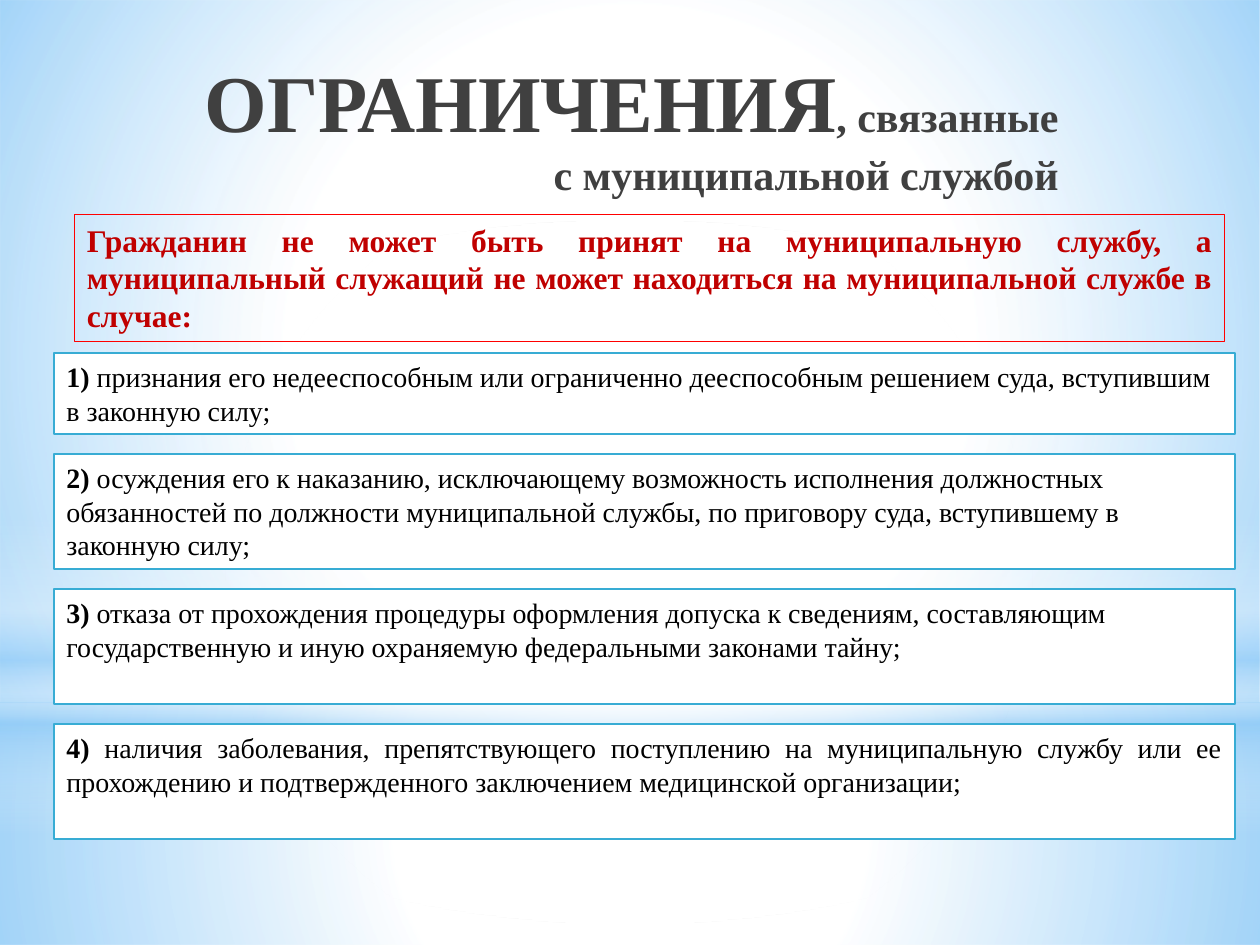
"""Build a slide on the restrictions tied to municipal service."""
from lxml.etree import SubElement
from pptx import Presentation
from pptx.dml.color import RGBColor
from pptx.enum.shapes import MSO_SHAPE as Preset
from pptx.enum.text import MSO_ANCHOR as Anchor, MSO_AUTO_SIZE as AutoSize, PP_ALIGN as Align
from pptx.oxml.ns import qn
from pptx.util import Cm, Pt

WHITE, SKY = "FFFFFF", "8BC9F7"
BACKDROP = [
    (Preset.RECTANGLE, (0, 14.17, 25.4, 4.88), [(0, WHITE, 91), (37, WHITE, 76), (100, SKY, 79)], None),
    (Preset.RECTANGLE, (0, 0, 25.4, 14.17), [(0, WHITE, 89), (48, WHITE, 62), (100, SKY, 79)], None),
    (Preset.RECTANGLE, (0, 10.46, 25.4, 6.35),
     [(0, WHITE, 0), (29, WHITE, 30), (45, SKY, 40), (55, WHITE, 26), (65, SKY, 60), (100, WHITE, 0)], 90),
    (Preset.OVAL, (0, 4.45, 25.4, 14.17), [(0, WHITE, 100), (56, WHITE, 0)], None),
]
HEADING = [("ОГРАНИЧЕНИЯ", {"size": Pt(46)}), (", связанные с муниципальной службой", {"size": Pt(24)})]
CONDITION = ("Гражданин не может быть принят на муниципальную службу, а муниципальный служащий "
             "не может находиться на муниципальной службе в случае:")
GROUNDS = [
    (1.63, Align.LEFT, "признания его недееспособным или ограниченно дееспособным решением суда, "
                       "вступившим в законную силу;"),
    (2.31, Align.LEFT, "осуждения его к наказанию, исключающему возможность исполнения должностных "
                       "обязанностей по должности муниципальной службы, по приговору суда, "
                       "вступившему в законную силу;"),
    (2.31, Align.LEFT, "отказа от прохождения процедуры оформления допуска к сведениям, составляющим "
                       "государственную и иную охраняемую федеральными законами тайну;"),
    (2.31, Align.JUSTIFY, "наличия заболевания, препятствующего поступлению на муниципальную службу "
                          "или ее прохождению и подтвержденного заключением медицинской организации;"),
]
GROUND_TOP, GROUND_GAP = 7.12, 0.41


def color(code):
    return RGBColor.from_string(code)


class Composer:
    """Holds the text style and the current slide."""

    face = "Times New Roman"

    def __init__(self, slide):
        self.slide = slide

    def glow(self, preset, box, stops, angle):
        panel = self.slide.shapes.add_shape(preset, *map(Cm, box))
        panel.shadow.inherit = False
        panel.line.fill.background()
        panel.fill.background()
        properties = panel.element.spPr
        gradient = SubElement(properties, qn("a:gradFill"), rotWithShape="1")
        stop_list = SubElement(gradient, qn("a:gsLst"))
        for position, code, opacity in stops:
            stop = SubElement(stop_list, qn("a:gs"), pos=str(position * 1000))
            tint = SubElement(stop, qn("a:srgbClr"), val=code)
            SubElement(tint, qn("a:alpha"), val=str(opacity * 1000))
        if angle is None:
            circle = SubElement(gradient, qn("a:path"), {"path": "circle"})
            SubElement(circle, qn("a:fillToRect"), {side: "50000" for side in "ltrb"})
        else:
            SubElement(gradient, qn("a:lin"), ang=str(angle * 60000), scaled="0")
        properties.replace(properties.find(qn("a:noFill")), gradient)

    def typeset(self, frame, runs, ink, align):
        layout = {"word_wrap": True, "auto_size": AutoSize.NONE, "vertical_anchor": Anchor.TOP,
                  "margin_left": Cm(0.25), "margin_right": Cm(0.25),
                  "margin_top": Cm(0.13), "margin_bottom": Cm(0.13)}
        for name, value in layout.items():
            setattr(frame, name, value)
        paragraph = frame.paragraphs[0]
        paragraph.alignment = align
        for wording, style in runs:
            run = paragraph.add_run()
            run.text = wording
            run.font.color.rgb = color(ink)
            for name, value in ({"name": self.face, "bold": True} | style).items():
                setattr(run.font, name, value)
        return paragraph

    def title(self, box, runs):
        heading = self.slide.shapes.title
        for name, value in zip(("left", "top", "width", "height"), box):
            setattr(heading, name, Cm(value))
        heading.element.getparent().append(heading.element)
        paragraph = self.typeset(heading.text_frame, runs, "404040", Align.RIGHT)
        margins = paragraph._p.get_or_add_pPr()
        for name, value in {"marL": Cm(0.89), "indent": -Cm(0.89)}.items():
            margins.set(name, str(int(value)))

    def framed(self, box, runs, ink, align, edge, weight, fill=None):
        frame = self.slide.shapes.add_shape(Preset.RECTANGLE, *map(Cm, box))
        frame.shadow.inherit = False
        if fill:
            frame.fill.solid()
            frame.fill.fore_color.rgb = color(fill)
        else:
            frame.fill.background()
        frame.line.color.rgb = color(edge)
        frame.line.width = Pt(weight)
        self.typeset(frame.text_frame, runs, ink, align)


def main():
    deck = Presentation()
    deck.slide_width, deck.slide_height = Cm(25.4), Cm(19.05)
    composer = Composer(deck.slides.add_slide(deck.slide_layouts[5]))
    for layer in BACKDROP:
        composer.glow(*layer)
    composer.title((3.5, 0.91, 18.09, 3.2), HEADING)
    composer.framed((1.5, 4.32, 23.19, 2.57), [(CONDITION, {"size": Pt(18)})],
                    "C00000", Align.JUSTIFY, "FF0000", 0.75)
    top = GROUND_TOP
    for number, (height, align, ground) in enumerate(GROUNDS, 1):
        runs = [(f"{number})", {"size": Pt(16)}), (f" {ground}", {"size": Pt(16), "bold": False})]
        composer.framed((1.09, top, 23.8, height), runs, "000000", align, "38ACD4", 1.25, WHITE)
        top += height + GROUND_GAP
    deck.save("out.pptx")


if __name__ == "__main__":
    main()
